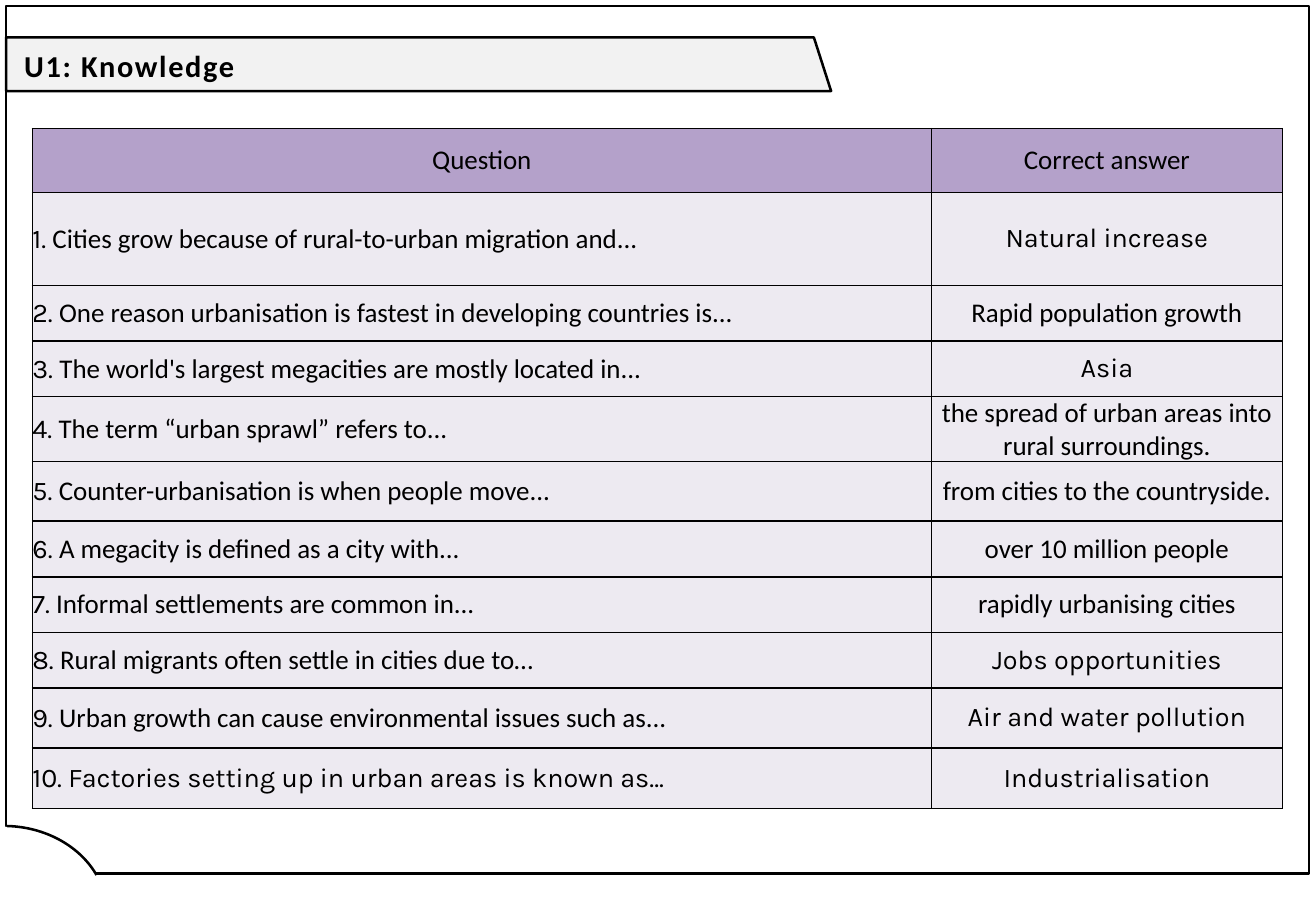
from lxml.etree import SubElement
from pptx import Presentation
from pptx.dml.color import RGBColor
from pptx.enum.shapes import MSO_SHAPE
from pptx.enum.text import MSO_ANCHOR, PP_ALIGN
from pptx.oxml.ns import qn
from pptx.util import Pt

PX = 7620  # EMU; 120 px to the inch
COLORS = {
    "ink": "000000",
    "paper": "FFFFFF",
    "banner": "F2F2F2",
    "head": "B4A1CA",
    "body": "EDEAF1",
}
BODY, ACCENT = "Calibri", "Karla"
COL_WIDTHS = (888, 347)
ROW_HEIGHTS = (63, 92, 55, 55, 55, 59, 55, 55, 55, 59, 60)

# question, question font, answer, answer font
QUIZ = [
    ("Cities grow because of rural-to-urban migration and...", BODY,
     "Natural increase", ACCENT),
    ("One reason urbanisation is fastest in developing countries is...", BODY,
     "Rapid population growth", BODY),
    ("The world's largest megacities are mostly located in...", BODY,
     "Asia", ACCENT),
    ("The term “urban sprawl” refers to...", BODY,
     "the spread of urban areas into rural surroundings.", BODY),
    ("Counter-urbanisation is when people move...", BODY,
     "from cities to the countryside.", BODY),
    ("A megacity is defined as a city with...", BODY,
     "over 10 million people", BODY),
    ("Informal settlements are common in...", BODY,
     "rapidly urbanising cities", BODY),
    ("Rural migrants often settle in cities due to…", BODY,
     "Jobs opportunities", ACCENT),
    ("Urban growth can cause environmental issues such as...", BODY,
     "Air and water pollution", ACCENT),
    ("Factories setting up in urban areas is known as…", ACCENT,
     "Industrialisation", ACCENT),
]


def px(*lengths):
    return [n * PX for n in lengths]


def rgb(name):
    return RGBColor.from_string(COLORS[name])


def style(sp, fill=None, line="ink"):
    sp.shadow.inherit = False
    if fill:
        sp.fill.solid()
        sp.fill.fore_color.rgb = rgb(fill)
    else:
        sp.fill.background()
    if line:
        sp.line.color.rgb = rgb(line)
        sp.line.width = Pt(1.5)
    else:
        sp.line.fill.background()


def add_banner(s, x, y, w, h):
    """Slanted title strip with its heading."""
    slant = 17
    fb = s.shapes.build_freeform(x, y, scale=PX)
    fb.add_line_segments([(x + w - slant, y), (x + w, y + h), (x, y + h)])
    style(fb.convert_to_shape(), "banner")

    tf = s.shapes.add_textbox(*px(x + 6, y - 12, 772, h + 23)).text_frame
    tf.word_wrap = True
    tf.vertical_anchor = MSO_ANCHOR.MIDDLE
    p = tf.paragraphs[0]
    p.line_spacing = 1.07
    p.space_after = Pt(8)
    r = p.add_run()
    r.text = "U1: Knowledge"
    p.font.name, p.font.size, p.font.bold = BODY, Pt(18), True
    p.font.color.rgb = rgb("ink")
    r.font._element.set("spc", "100")


def add_frame(s, x, y, w, h):
    """Page border with a rounded bite out of its lower left corner."""
    style(s.shapes.add_shape(MSO_SHAPE.RECTANGLE, *px(x, y, w, h)))
    bottom = y + h
    arc = s.shapes.add_shape(MSO_SHAPE.ARC, *px(x - 104, bottom - 47, 204, 174))
    arc.adjustments[0], arc.adjustments[1] = 162.53, 202.27
    style(arc, "paper")
    patch = s.shapes.add_shape(MSO_SHAPE.RECTANGLE, *px(x - 5, bottom - 46, 6, 12))
    style(patch, "paper", line=None)


def add_borders(cell):
    tc_pr = cell._tc.get_or_add_tcPr()
    for i, side in enumerate(("lnL", "lnR", "lnT", "lnB")):
        ln = SubElement(tc_pr, qn(f"a:{side}"), w=str(Pt(1)))
        fill = SubElement(ln, qn("a:solidFill"))
        SubElement(fill, qn("a:srgbClr"), val=COLORS["ink"])
        tc_pr.insert(i, ln)


def fill_cell(cell, runs, fill, align):
    """Write (text, font) runs into a bordered cell without margins."""
    cell.margin_left = cell.margin_right = 0
    cell.margin_top = cell.margin_bottom = 0
    cell.vertical_anchor = MSO_ANCHOR.MIDDLE
    cell.fill.solid()
    cell.fill.fore_color.rgb = rgb(fill)
    add_borders(cell)
    p = cell.text_frame.paragraphs[0]
    p.alignment = align
    for text, font in runs:
        r = p.add_run()
        r.text = text
        r.font.name = font
        r.font.size = Pt(16)
        r.font.color.rgb = rgb("ink")


def add_quiz(s, x, y):
    size = sum(COL_WIDTHS), sum(ROW_HEIGHTS)
    table = s.shapes.add_table(len(ROW_HEIGHTS), len(COL_WIDTHS),
                               *px(x, y, *size)).table
    for col, width in zip(table.columns, px(*COL_WIDTHS)):
        col.width = width
    for row, height in zip(table.rows, px(*ROW_HEIGHTS)):
        row.height = height

    for i, title in enumerate(("Question", "Correct answer")):
        fill_cell(table.cell(0, i), [(title, BODY)], "head", PP_ALIGN.CENTER)
    for n, (question, q_font, answer, a_font) in enumerate(QUIZ, 1):
        fill_cell(table.cell(n, 0), [(f"{n}. ", ACCENT), (question, q_font)],
                  "body", PP_ALIGN.LEFT)
        fill_cell(table.cell(n, 1), [(answer, a_font)], "body", PP_ALIGN.CENTER)


def main():
    prs = Presentation()
    prs.slide_width, prs.slide_height = px(1300, 900)
    s = prs.slides.add_slide(prs.slide_layouts[6])
    add_banner(s, 6, 37, 815, 53)
    add_frame(s, 6, 6, 1287, 857)
    add_quiz(s, 32, 127)
    prs.save("out.pptx")


if __name__ == "__main__":
    main()
